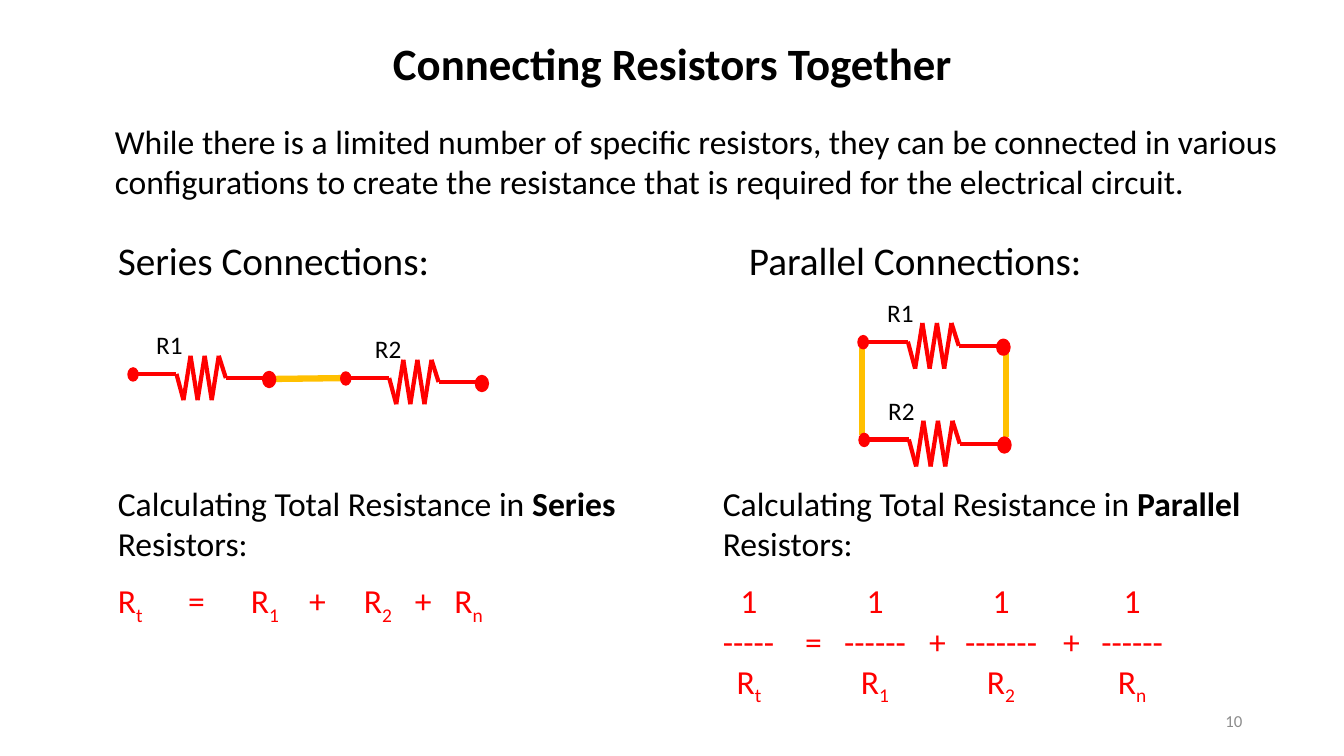
from itertools import pairwise

from lxml.etree import SubElement
from pptx import Presentation
from pptx.dml.color import RGBColor
from pptx.enum.shapes import MSO_CONNECTOR as Connector, MSO_SHAPE as Shape
from pptx.enum.text import MSO_ANCHOR as Anchor, PP_ALIGN as Align
from pptx.oxml.ns import qn
from pptx.util import Pt

EMU_PER_PX = 9144  # 100 px to the inch
COLORS = {"text": "000000", "red": "FF0000", "wire": "FFC000", "number": "8C8C8C"}

# Resistor outline, measured from the left edge of its first dot and its lead
ZIGZAG_X = [10, 48, *range(55, 98, 7), 135]
ZIGZAG_Y = [0, 0, *[26, -18] * 3, 4, 4]


def px(length):
    return round(length * EMU_PER_PX)


def rgb(name):
    return RGBColor.from_string(COLORS[name])


class SlideBuilder:
    font_name = "Calibri"

    def __init__(self, slide):
        self.slide = slide

    def group(self):
        return self.slide.shapes.add_group_shape().shapes

    def text(self, box, paragraphs, size, color="text", shapes=None, anchor=Anchor.TOP):
        """Each paragraph is (runs, formats, tab stops); each run is (text, style)."""
        shapes = shapes or self.slide.shapes
        frame = shapes.add_textbox(*map(px, box)).text_frame
        frame.word_wrap = True
        frame.vertical_anchor = anchor
        for index, (runs, formats, stops) in enumerate(paragraphs):
            paragraph = frame.add_paragraph() if index else frame.paragraphs[0]
            for name, value in formats.items():
                setattr(paragraph, name, value)
            if stops:
                self.tab_stops(paragraph, stops)
            for words, style in runs:
                run = paragraph.add_run()
                run.text = words
                font = {"name": self.font_name, "size": Pt(size), "bold": style == "bold"}
                for name, value in font.items():
                    setattr(run.font, name, value)
                run.font.color.rgb = rgb("red" if stops else color)
                if style == "sub":
                    run._r.get_or_add_rPr().set("baseline", "-25000")

    def tab_stops(self, paragraph, stops):
        tab_list = SubElement(paragraph._p.get_or_add_pPr(), qn("a:tabLst"))
        for stop in stops:
            SubElement(tab_list, qn("a:tab"), pos=str(px(stop)), algn="ctr")

    def plain(self, box, words, size, color="text", shapes=None, anchor=Anchor.TOP, **formats):
        self.text(box, [([(words, "")], formats, None)], size, color, shapes, anchor)

    def line(self, shapes, start, end, color, width):
        connector = shapes.add_connector(Connector.STRAIGHT, *map(px, (*start, *end)))
        connector.line.color.rgb = rgb(color)
        connector.line.width = Pt(width)
        SubElement(connector._element.spPr, qn("a:effectLst"))

    def dot(self, shapes, left, top, scale, width):
        shape = shapes.add_shape(Shape.OVAL, px(left), px(top), px(10 * scale), px(13))
        shape.shadow.inherit = False
        shape.fill.solid()
        shape.fill.fore_color.rgb = rgb("red")
        shape.line.color.rgb = rgb("red")
        shape.line.width = Pt(width)

    def resistor(self, shapes, label, left, lead, label_left, scale=1.0):
        points = [(left + x * scale, lead + y * scale) for x, y in zip(ZIGZAG_X, ZIGZAG_Y)]
        for start, end in pairwise(points):
            self.line(shapes, start, end, "red", 3)
        self.dot(shapes, points[-1][0], lead - 1, scale, 3)
        self.dot(shapes, left, lead - 6, scale, 1)
        self.plain((label_left, lead - 49, 65, 40), label, 18, shapes=shapes)


def tabbed(terms, leading=False):
    """Runs for one row of terms, with a tab between them; R_x sets x as subscript."""
    runs = []
    for index, term in enumerate(terms.split()):
        base, _, subscript = term.partition("_")
        runs.append((("\t" if index or leading else "") + base, ""))
        if subscript:
            runs.append((subscript, "sub"))
    return runs


def calculation(kind):
    return [("Calculating Total Resistance in ", ""), (kind, "bold"), (" Resistors:", "")]


def main():
    presentation = Presentation()
    presentation.slide_width, presentation.slide_height = px(1333), px(750)
    slide = presentation.slides.add_slide(presentation.slide_layouts[6])
    builder = SlideBuilder(slide)

    # Title, introduction and headings
    builder.text((217, 36, 900, 59),
                 [([("Connecting Resistors Together", "bold")],
                   {"alignment": Align.CENTER, "line_spacing": 0.9}, None)],
                 32, anchor=Anchor.MIDDLE)
    builder.plain((104, 115, 1187, 91),
                  "While there is a limited number of specific resistors, they can be "
                  "connected in various configurations to create the resistance that is "
                  "required for the electrical circuit.", 24)
    builder.plain((107, 230, 509, 57), "Series Connections:", 28)
    builder.plain((733, 230, 403, 57), "Parallel Connections:", 28)

    # Series circuit
    series = builder.group()
    builder.line(series, (268, 376), (348, 375), "wire", 4.5)
    builder.resistor(series, "R1", 127, 371, 145)
    builder.resistor(series, "R2", 338, 375, 362)

    # Parallel circuit
    parallel = builder.group()
    for x, top in ((998, 347), (855, 345)):
        builder.line(parallel, (x, top + 87), (x, top), "wire", 4.5)
    for label, left, lead in (("R1", 851, 339), ("R2", 852, 436)):
        builder.resistor(parallel, label, left, lead, left + 19, scale=1.03)

    # Total resistance formulas
    gap = {"space_before": Pt(12)}
    series_stops = [78, 146, 198, 258, 303, 348]
    parallel_stops = [26, 90, 151, 213, 276, 346, 406]
    fraction_stops = parallel_stops[::2]
    builder.text((707, 474, 535, 229), [
        (calculation("Parallel"), {}, None),
        (tabbed("1 1 1 1", leading=True), gap, fraction_stops),
        (tabbed("----- = ------ + ------- + ------"), {}, parallel_stops[1:]),
        (tabbed("R_t R_1 R_2 R_n", leading=True), {}, fraction_stops),
    ], 24)
    builder.text((107, 474, 535, 148), [
        (calculation("Series"), {}, None),
        (tabbed("R_t = R_1 + R_2 + R_n"), gap, series_stops),
    ], 24)

    # Slide number
    builder.plain((942, 695, 300, 40), "10", 12, "number",
                  anchor=Anchor.MIDDLE, alignment=Align.RIGHT)

    presentation.save("out.pptx")


if __name__ == "__main__":
    main()
